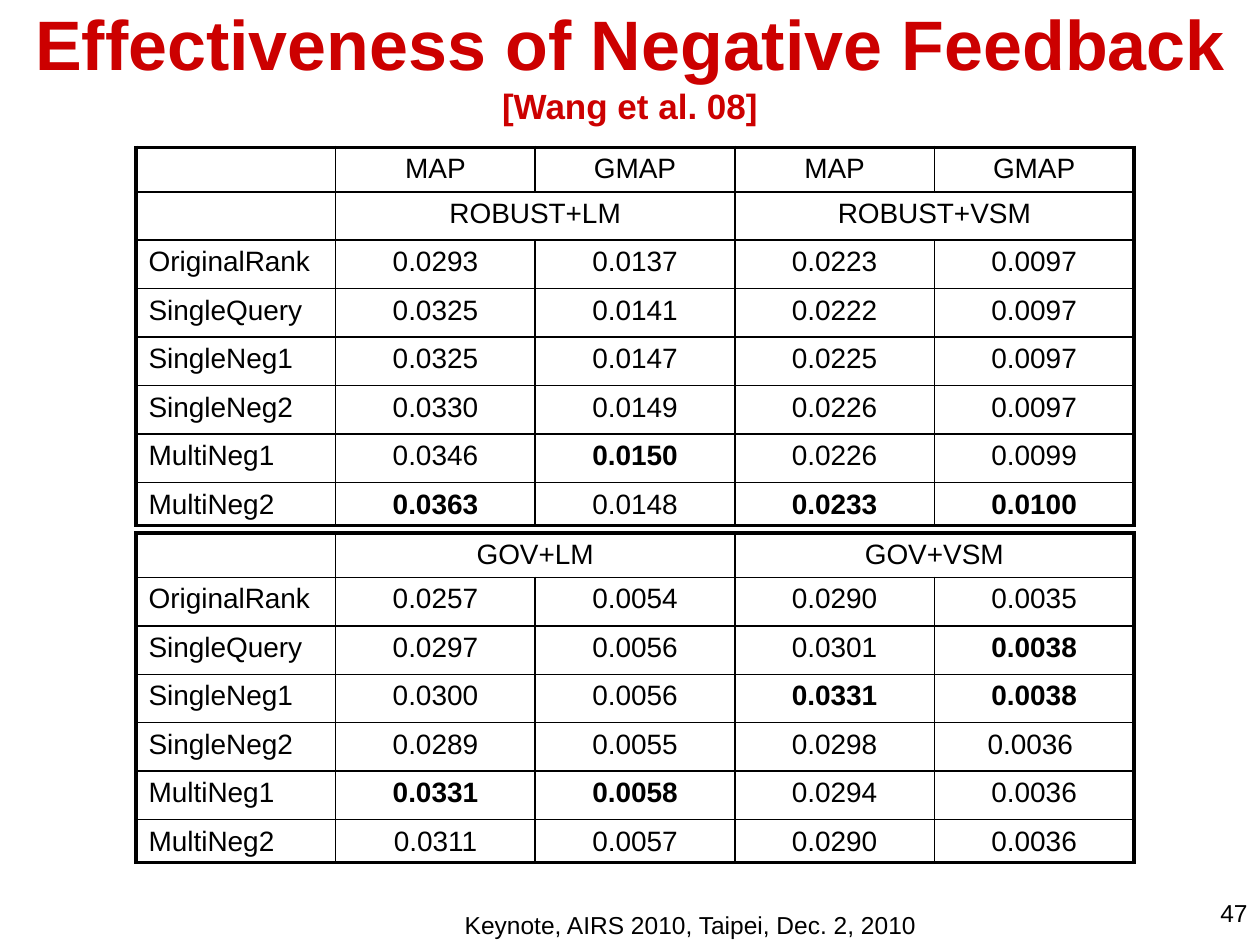
"""Build a slide with two result tables on the effectiveness of negative feedback."""
import lxml.etree
import pptx
import pptx.dml.color
import pptx.enum.text
import pptx.oxml.ns
import pptx.util

Inches = pptx.util.Inches
Pt = pptx.util.Pt
ALIGN = pptx.enum.text.PP_ALIGN
ANCHOR = pptx.enum.text.MSO_ANCHOR
qn = pptx.oxml.ns.qn


def style_font(font, size, color="000000", bold=False):
    for name, value in {"name": "Arial", "size": Pt(size), "bold": bold}.items():
        setattr(font, name, value)
    font.color.rgb = pptx.dml.color.RGBColor.from_string(color)


def draw_border(cell, side, width):
    line = lxml.etree.SubElement(cell._tc.get_or_add_tcPr(), qn(f"a:ln{side}"), w=str(Pt(width)))
    fill = lxml.etree.SubElement(line, qn("a:solidFill"))
    lxml.etree.SubElement(fill, qn("a:srgbClr"), val="000000")


deck = pptx.Presentation()
deck.slide_width, deck.slide_height = Inches(10), Inches(7.5)
slide = deck.slides.add_slide(deck.slide_layouts[5])

title = slide.shapes.title
title_place = {"left": 0, "top": -0.08, "width": 10, "height": 1.17}
for name, value in title_place.items():
    setattr(title, name, Inches(value))
title_format = {
    "word_wrap": True,
    "auto_size": pptx.enum.text.MSO_AUTO_SIZE.NONE,
    "vertical_anchor": ANCHOR.MIDDLE,
}
for name, value in title_format.items():
    setattr(title.text_frame, name, value)
para = title.text_frame.paragraphs[0]
para.alignment = ALIGN.CENTER
span = para.add_run()
span.text = "Effectiveness of Negative Feedback"
style_font(span.font, 40, "CC0000", True)
para.add_line_break()
span = para.add_run()
span.text = "[Wang et al. 08]"
style_font(span.font, 20, "CC0000", True)

methods = ["OriginalRank", "SingleQuery", "SingleNeg1", "SingleNeg2", "MultiNeg1", "MultiNeg2"]
robust_scores = [
    ["0.0293", "0.0137", "0.0223", "0.0097"],
    ["0.0325", "0.0141", "0.0222", "0.0097"],
    ["0.0325", "0.0147", "0.0225", "0.0097"],
    ["0.0330", "0.0149", "0.0226", "0.0097"],
    ["0.0346", "*0.0150", "0.0226", "0.0099"],
    ["*0.0363", "0.0148", "*0.0233", "*0.0100"],
]
gov_scores = [
    ["0.0257", "0.0054", "0.0290", "0.0035"],
    ["0.0297", "0.0056", "0.0301", "*0.0038"],
    ["0.0300", "0.0056", "*0.0331", "*0.0038"],
    ["0.0289", "0.0055", "0.0298", "0.0036 "],
    ["*0.0331", "*0.0058", "0.0294", "0.0036"],
    ["0.0311", "0.0057", "0.0290", "0.0036"],
]
metrics = ["", "MAP", "GMAP", "MAP", "GMAP"]
robust_header = ["", "ROBUST+LM", None, "ROBUST+VSM", None]
gov_header = ["", "GOV+LM", None, "GOV+VSM", None]
tables = [
    (1.17, [metrics, robust_header], robust_scores),
    (4.23, [gov_header], gov_scores),
]
edge_height, body_height = Inches(0.34), Inches(2.31) // 6
cell_format = {
    "margin_left": Inches(0.1),
    "margin_right": Inches(0.1),
    "margin_top": Inches(0.05),
    "margin_bottom": Inches(0.03),
    "vertical_anchor": ANCHOR.TOP,
}

for top, headers, scores in tables:
    rows = headers + [[method, *values] for method, values in zip(methods, scores)]
    last_row, last_column = len(rows) - 1, len(metrics) - 1
    heights = [edge_height] + [body_height] * (last_row - 1) + [edge_height]
    frame = slide.shapes.add_table(
        len(rows), len(metrics), Inches(1.08), Inches(top), Inches(7.92), sum(heights)
    )
    table = frame.table
    table.first_row = table.horz_banding = False
    for column in table.columns:
        column.width = Inches(7.92) // len(metrics)
    for row_index, (values, height) in enumerate(zip(rows, heights)):
        table.rows[row_index].height = height
        for column_index, value in enumerate(values):
            cell = table.cell(row_index, column_index)
            if None in values and column_index in (1, 3):
                cell.merge(table.cell(row_index, column_index + 1))
            right_column = column_index + cell.span_width - 1 if cell.is_merge_origin else column_index
            outer_sides = {
                "L": column_index == 0,
                "R": right_column == last_column,
                "T": row_index == 0,
                "B": row_index == last_row,
            }
            for side, is_outer in outer_sides.items():
                draw_border(cell, side, 2.25 if is_outer else 1)
            cell.fill.background()
            for name, setting in cell_format.items():
                setattr(cell, name, setting)
            para = cell.text_frame.paragraphs[0]
            para.alignment = ALIGN.CENTER if column_index else ALIGN.LEFT
            if value:
                span = para.add_run()
                span.text = value.lstrip("*")
                style_font(span.font, 16, bold=value.startswith("*"))
            else:
                lxml.etree.SubElement(para._p, qn("a:endParaRPr"), sz="1600")

captions = [
    ("47", 7.92, 7.08, 2.08, 0.5, ALIGN.RIGHT),
    ("Keynote, AIRS 2010, Taipei, Dec. 2, 2010", 3.19, 7.17, 4.58, 0.42, ALIGN.CENTER),
]
for text, left, top, width, height, alignment in captions:
    box = slide.shapes.add_textbox(Inches(left), Inches(top), Inches(width), Inches(height))
    box.text_frame.word_wrap = True
    para = box.text_frame.paragraphs[0]
    para.alignment = alignment
    span = para.add_run()
    span.text = text
    style_font(span.font, 14)

deck.save("out.pptx")
